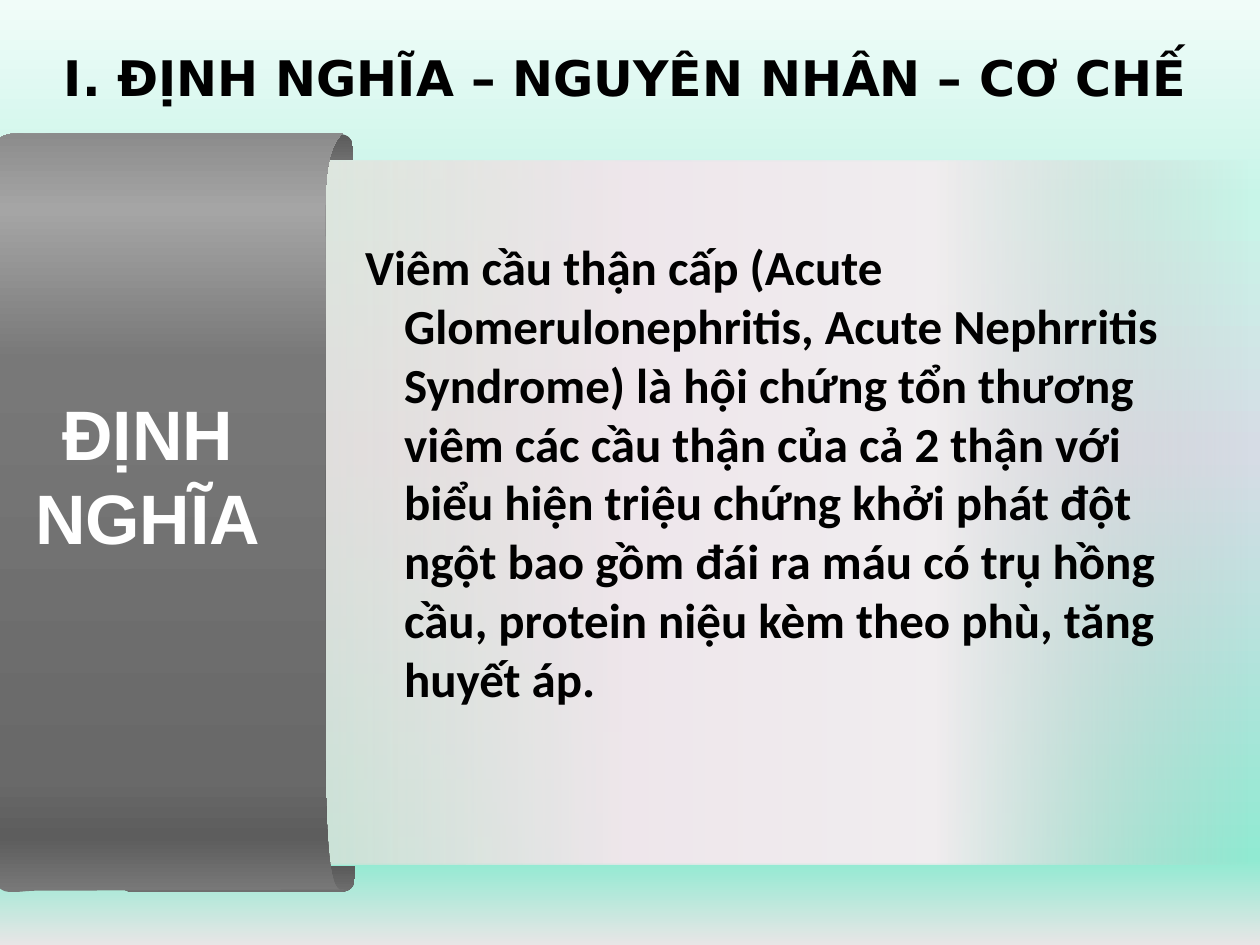
from dataclasses import dataclass
from typing import NamedTuple

from lxml.etree import SubElement
from pptx import Presentation
from pptx.dml.color import RGBColor
from pptx.enum.shapes import MSO_SHAPE
from pptx.enum.text import MSO_ANCHOR as Anchor, MSO_AUTO_SIZE as AutoSize, PP_ALIGN as Align
from pptx.oxml.ns import qn
from pptx.util import Pt

BLACK = RGBColor(0x00, 0x00, 0x00)
WHITE = RGBColor(0xFF, 0xFF, 0xFF)
ICE = RGBColor(0xF1, 0xFC, 0xF9)
PALE_MINT = RGBColor(0xC8, 0xF5, 0xE8)
BLUE_GREY = RGBColor(0xD6, 0xDC, 0xE5)
MINT = RGBColor(0x91, 0xEA, 0xD2)
LIGHT_GREY = RGBColor(0xE7, 0xE6, 0xE6)
SILVER = RGBColor(0xC8, 0xC7, 0xC6)
PEARL = RGBColor(0xF0, 0xED, 0xEF)
ROSE = RGBColor(0xEE, 0xE6, 0xEB)
SAND = RGBColor(0xE2, 0xDC, 0xD1)
CREAM = RGBColor(0xEF, 0xEB, 0xE5)
FOLD_DARK = RGBColor(0x5A, 0x5A, 0x5A)
FOLD_LIGHT = RGBColor(0x6E, 0x6E, 0x6E)
STEEL = RGBColor(0x78, 0x78, 0x78)
STEEL_SHADE = RGBColor(0x5D, 0x5D, 0x5D)
STEEL_MID = RGBColor(0x69, 0x69, 0x69)
STEEL_SHINE = RGBColor(0xA5, 0xA5, 0xA5)
STEEL_EDGE = RGBColor(0x8C, 0x8C, 0x8C)

SLIDE_WIDTH, SLIDE_HEIGHT = 720, 540
MIRROR_SUM = 586.1  # top y plus bottom y of the two folds


class Stop(NamedTuple):
    position: int
    color: RGBColor
    opacity: int = 100


@dataclass
class Label:
    text: str
    box: tuple
    font: dict
    paragraph: dict
    frame: dict
    hanging: float = 0


BACKDROP = [Stop(0, ICE), Stop(21, PALE_MINT), Stop(48, BLUE_GREY), Stop(91, MINT),
            Stop(100, LIGHT_GREY)]
PANEL = [Stop(0, SILVER, 0), Stop(25, PEARL), Stop(50, ROSE), Stop(85, SAND, 52),
         Stop(98, CREAM, 0)]
FOLD = [Stop(0, FOLD_DARK), Stop(100, FOLD_LIGHT)]
SCROLL = [Stop(0, STEEL), Stop(7, STEEL_SHADE), Stop(15, STEEL_MID), Stop(70, STEEL),
          Stop(90, STEEL_SHINE), Stop(100, STEEL_EDGE)]

# Each segment is one point (a line) or three points (a cubic curve).
TOP_FOLD = [
    [(201.9, 91.4)], [(190.4, 91.4)], [(67, 91.4)],
    [(67.7, 79.2), (67.7, 75.6), (79.2, 76.3)], [(191.5, 76.3)],
    [(201.9, 76.3), (201.9, 81.4), (201.9, 91.4)],
]
BOTTOM_FOLD = [[(x + 1.1, MIRROR_SUM - y) for x, y in segment] for segment in TOP_FOLD]
SCROLL_OUTLINE = [
    [(195.8, 76.1)], [(29.5, 76.1)],
    [(0, 78.5), (-7.2, 64.8), (-7.2, 125.3)],
    [(-7.2, 230.9), (-7.2, 336.5), (-7.2, 442.1)],
    [(-7.9, 524.2), (-1.4, 508.3), (23, 509)], [(196.6, 508.3)],
    [(189.4, 510.5), (186.5, 494.6), (185.8, 427)],
    [(185.8, 342.7), (185.8, 257.8), (186.2, 173.5)],
    [(186.2, 115.9), (182.9, 89.3), (195.8, 76.1)],
]

TITLE = Label(
    "I. ĐỊNH NGHĨA – NGUYÊN NHÂN – CƠ CHẾ", (11.7, 23.4, 690.5, 74.9),
    {"name": "DejaVu Sans", "size": Pt(28), "bold": True}, {"alignment": Align.CENTER},
    {"word_wrap": False, "vertical_anchor": Anchor.TOP, "auto_size": AutoSize.NONE})
HEADING = Label(
    "ĐỊNH NGHĨA", (-7.4, 219.6, 183.6, 104.4),
    {"name": "Arial", "size": Pt(40), "bold": True}, {"alignment": Align.CENTER},
    {"word_wrap": True})
DEFINITION = Label(
    "Viêm cầu thận cấp (Acute Glomerulonephritis, Acute Nephrritis Syndrome) là hội chứng "
    "tổn thương viêm các cầu thận của cả 2 thận với biểu hiện triệu chứng khởi phát đột ngột "
    "bao gồm đái ra máu có trụ hồng cầu, protein niệu kèm theo phù, tăng huyết áp.",
    (201.6, 97.9, 484.6, 346.3),
    {"name": "Calibri", "size": Pt(28), "bold": True}, {"alignment": Align.LEFT},
    {"word_wrap": True, "margin_top": Pt(37.3)}, hanging=22.3)


def set_all(target, values: dict) -> None:
    for name, value in values.items():
        setattr(target, name, value)


def fill_gradient(fill, element, stops: list, angle: float) -> None:
    """Give the fill held in element these stops; angle runs clockwise."""
    fill.gradient()
    fill.gradient_angle = 360 - angle
    stop_list = next(element.iter(qn("a:gsLst")))
    for old in list(stop_list):
        stop_list.remove(old)
    for stop in stops:
        mark = SubElement(stop_list, qn("a:gs"), pos=str(stop.position * 1000))
        color = SubElement(mark, qn("a:srgbClr"), val=str(stop.color))
        if stop.opacity < 100:
            SubElement(color, qn("a:alpha"), val=str(stop.opacity * 1000))


def finish_shape(shape, stops: list, angle: float) -> None:
    shape.shadow.inherit = False
    shape.line.fill.background()
    fill_gradient(shape.fill, shape.element.spPr, stops, angle)


def draw_outline(shapes, outline: list, stops: list, angle: float) -> None:
    """Join the segment ends with lines, then bend those that are curves."""
    start, *ends = [tuple(map(Pt, segment[-1])) for segment in outline]
    builder = shapes.build_freeform(*start)
    builder.add_line_segments(ends, close=True)
    shape = builder.convert_to_shape()
    lines = list(shape.element.spPr.iter(qn("a:lnTo")))
    for line, segment in zip(lines, outline[1:]):
        if len(segment) == 3:
            curve = line.makeelement(qn("a:cubicBezTo"))
            for x, y in segment:
                SubElement(curve, qn("a:pt"), x=str(Pt(x) - shape.left),
                           y=str(Pt(y) - shape.top))
            line.getparent().replace(line, curve)
    finish_shape(shape, stops, angle)


def write_label(shape, label: Label, color: RGBColor) -> None:
    set_all(shape, dict(zip(("left", "top", "width", "height"), map(Pt, label.box))))
    frame = shape.text_frame
    set_all(frame, label.frame)
    paragraph = frame.paragraphs[0]
    set_all(paragraph, label.paragraph)
    if label.hanging:
        properties = paragraph._p.get_or_add_pPr()
        properties.set("marL", str(Pt(label.hanging)))
        properties.set("indent", str(-Pt(label.hanging)))
    run = paragraph.add_run()
    run.text = label.text
    set_all(run.font, label.font)
    run.font.color.rgb = color


def main() -> None:
    deck = Presentation()
    deck.slide_width, deck.slide_height = Pt(SLIDE_WIDTH), Pt(SLIDE_HEIGHT)
    slide = deck.slides.add_slide(deck.slide_layouts[5])
    shapes = slide.shapes
    fill_gradient(slide.background.fill, slide.element, BACKDROP, 90)

    panel = shapes.add_shape(MSO_SHAPE.RECTANGLE, *map(Pt, (1.4, 91.6, 711.4, 402.5)))
    finish_shape(panel, PANEL, 180)
    for fold in (TOP_FOLD, BOTTOM_FOLD):
        draw_outline(shapes, fold, FOLD, 90)
    draw_outline(shapes, SCROLL_OUTLINE, SCROLL, 270)

    write_label(shapes.title, TITLE, BLACK)
    for label, color in ((HEADING, WHITE), (DEFINITION, BLACK)):
        write_label(shapes.add_textbox(*map(Pt, label.box)), label, color)
    deck.save("out.pptx")


if __name__ == "__main__":
    main()
